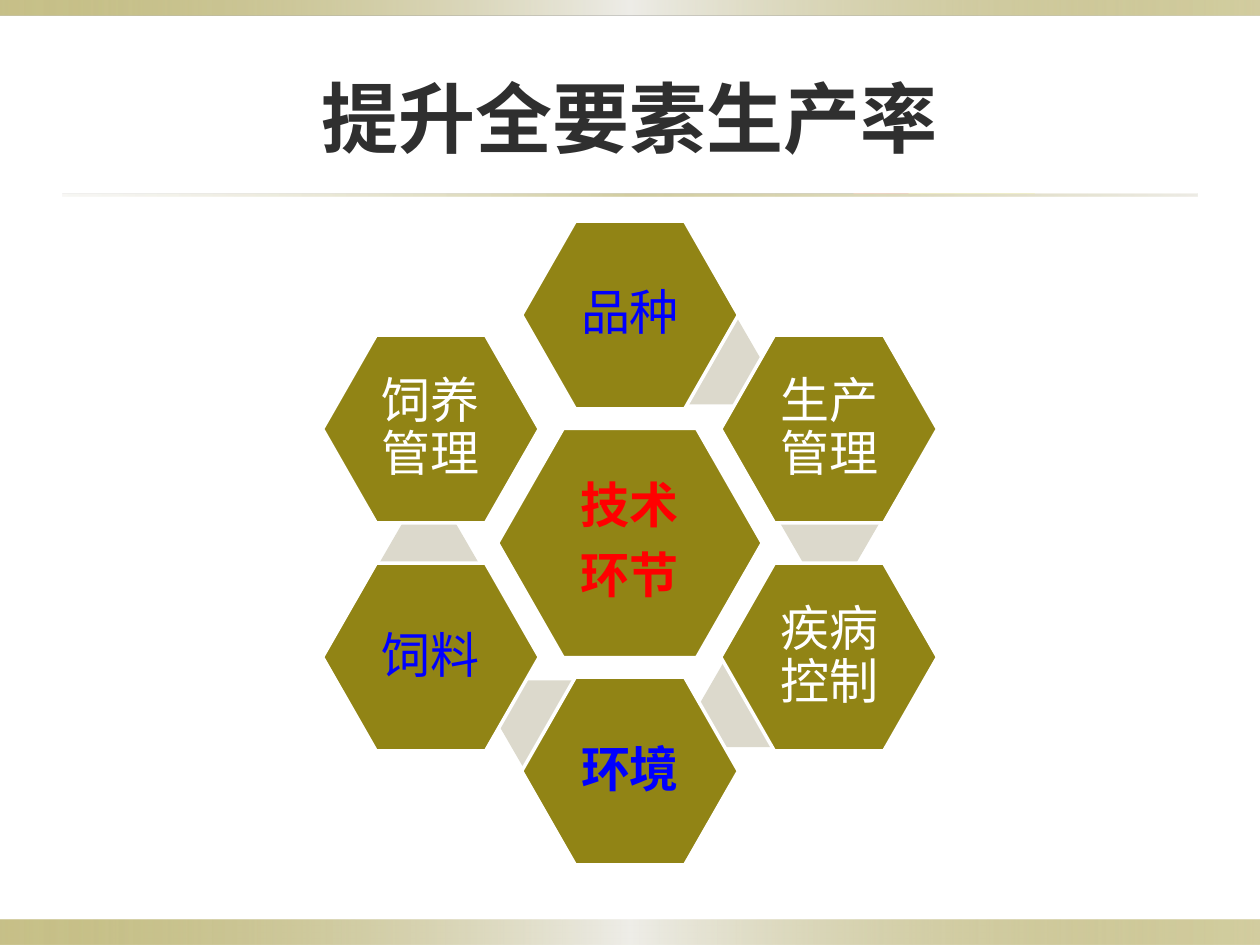
import pptx
import pptx.util
import pptx.dml.color
import pptx.enum.shapes
import pptx.enum.text
import pptx.oxml
import pptx.oxml.ns
from dataclasses import dataclass
from pptx.util import Inches


@dataclass(frozen=True)
class Theme:
    olive: str = "918415"
    mist: str = "EEEDE8"
    sand: str = "DCD9CC"
    white: str = "FFFFFF"
    ink: str = "2F2F2F"
    red: str = "FF0000"
    blue: str = "0000FF"
    title_font: str = "Noto Sans CJK SC"
    body_font: str = "Lato"
    title_size: int = 44
    body_size: int = 28


THEME = Theme()
CENTER_X, CENTER_Y = 5, 4.31
RING_SIZE = (1.72, 1.49)
CORE_SIZE = (2.1, 1.82)
ACCENT_SIZE = (0.79, 0.68)
COLUMN_STEP, ROW_STEP = 1.58, 0.905

# Gradient stops: position %, colour, opacity %
BAND_STOPS = [(0, THEME.olive, 50), (50, THEME.mist, 100), (100, THEME.olive, 40)]
RULE_STOPS = [(0, THEME.sand, 20), (50, THEME.olive, 40), (100, THEME.sand, 50)]

# Ring: text, colour, bold, column, row, accent offset from the centre
RING = [
    ("品种", THEME.blue, False, 0, -2, (0.655, -1.44)),
    ("生产管理", THEME.white, False, 1, -1, (1.585, -0.16)),
    ("疾病控制", THEME.white, False, 1, 1, (0.945, 1.28)),
    ("环境", THEME.blue, True, 0, 2, (-0.655, 1.43)),
    ("饲料", THEME.blue, False, -1, 1, (-1.595, 0.16)),
    ("饲养管理", THEME.white, False, -1, -1, None),
]


def rgb(value):
    return pptx.dml.color.RGBColor.from_string(value)


def format_paragraph(paragraph, font_name, size, color, bold):
    paragraph.alignment = pptx.enum.text.PP_ALIGN.CENTER
    font = paragraph.font
    font.name = font_name
    font.size = pptx.util.Pt(size)
    font.bold = bold
    font.color.rgb = rgb(color)


def add_gradient_bar(slide, left, top, width, height, stops):
    shape = slide.shapes.add_shape(
        pptx.enum.shapes.MSO_SHAPE.RECTANGLE,
        Inches(left), Inches(top), Inches(width), Inches(height))
    shape.shadow.inherit = False
    shape.line.fill.background()
    # Three stops with opacity need XML
    stop_xml = "".join(
        f'<a:gs pos="{position * 1000}"><a:srgbClr val="{color}">'
        f'<a:alpha val="{opacity * 1000}"/></a:srgbClr></a:gs>'
        for position, color, opacity in stops)
    gradient = pptx.oxml.parse_xml(
        f'<a:gradFill {pptx.oxml.ns.nsdecls("a")} rotWithShape="1">'
        f'<a:gsLst>{stop_xml}</a:gsLst><a:lin ang="0" scaled="0"/></a:gradFill>')
    shape.element.spPr.find(pptx.oxml.ns.qn("a:prstGeom")).addnext(gradient)


def add_hexagon(slide, offset, size, fill, adjustment):
    width, height = size
    shape = slide.shapes.add_shape(
        pptx.enum.shapes.MSO_SHAPE.HEXAGON,
        Inches(CENTER_X + offset[0] - width / 2),
        Inches(CENTER_Y + offset[1] - height / 2),
        Inches(width), Inches(height))
    shape.adjustments[0] = adjustment
    shape.shadow.inherit = False
    shape.fill.solid()
    shape.fill.fore_color.rgb = rgb(fill)
    shape.line.fill.background()
    return shape


def add_label_hexagon(slide, offset, size, text, color, bold):
    shape = add_hexagon(slide, offset, size, THEME.olive, 0.286)
    shape.line.color.rgb = rgb(THEME.white)
    shape.line.width = pptx.util.Pt(2)
    frame = shape.text_frame
    frame.word_wrap = True
    frame.vertical_anchor = pptx.enum.text.MSO_ANCHOR.MIDDLE
    frame.margin_left = frame.margin_right = Inches(0.04)
    frame.margin_top = frame.margin_bottom = Inches(0.04)
    frame.text = text
    for paragraph in frame.paragraphs:
        format_paragraph(paragraph, THEME.body_font, THEME.body_size, color, bold)
        paragraph.line_spacing = 0.9
        paragraph.space_after = pptx.util.Pt(0.35 * THEME.body_size)


def set_title(slide, text):
    title = slide.shapes.title
    title.left, title.top = Inches(0.5), Inches(0.3)
    title.width, title.height = Inches(9), Inches(1.25)
    title.text_frame.text = text
    title.text_frame.vertical_anchor = pptx.enum.text.MSO_ANCHOR.MIDDLE
    format_paragraph(title.text_frame.paragraphs[0], THEME.title_font,
                     THEME.title_size, THEME.ink, True)


def main():
    presentation = pptx.Presentation()
    presentation.slide_width, presentation.slide_height = Inches(10), Inches(7.5)
    slide = presentation.slides.add_slide(presentation.slide_layouts[5])

    # Bands, title and rule
    add_gradient_bar(slide, 0, 7.3, 10, 0.2, BAND_STOPS)
    add_gradient_bar(slide, 0, 0, 10, 0.12, BAND_STOPS)
    add_gradient_bar(slide, 0.5, 1.54, 9, 0.02, RULE_STOPS)
    set_title(slide, "提升全要素生产率")

    # Core hexagon, then the ring with its accents behind
    add_label_hexagon(slide, (0, 0), CORE_SIZE, "技术\n环节", THEME.red, True)
    for text, color, bold, column, row, accent in RING:
        if accent:
            add_hexagon(slide, accent, ACCENT_SIZE, THEME.sand, 0.289)
        offset = (column * COLUMN_STEP, row * ROW_STEP)
        add_label_hexagon(slide, offset, RING_SIZE, text, color, bold)

    presentation.save("out.pptx")


if __name__ == "__main__":
    main()
